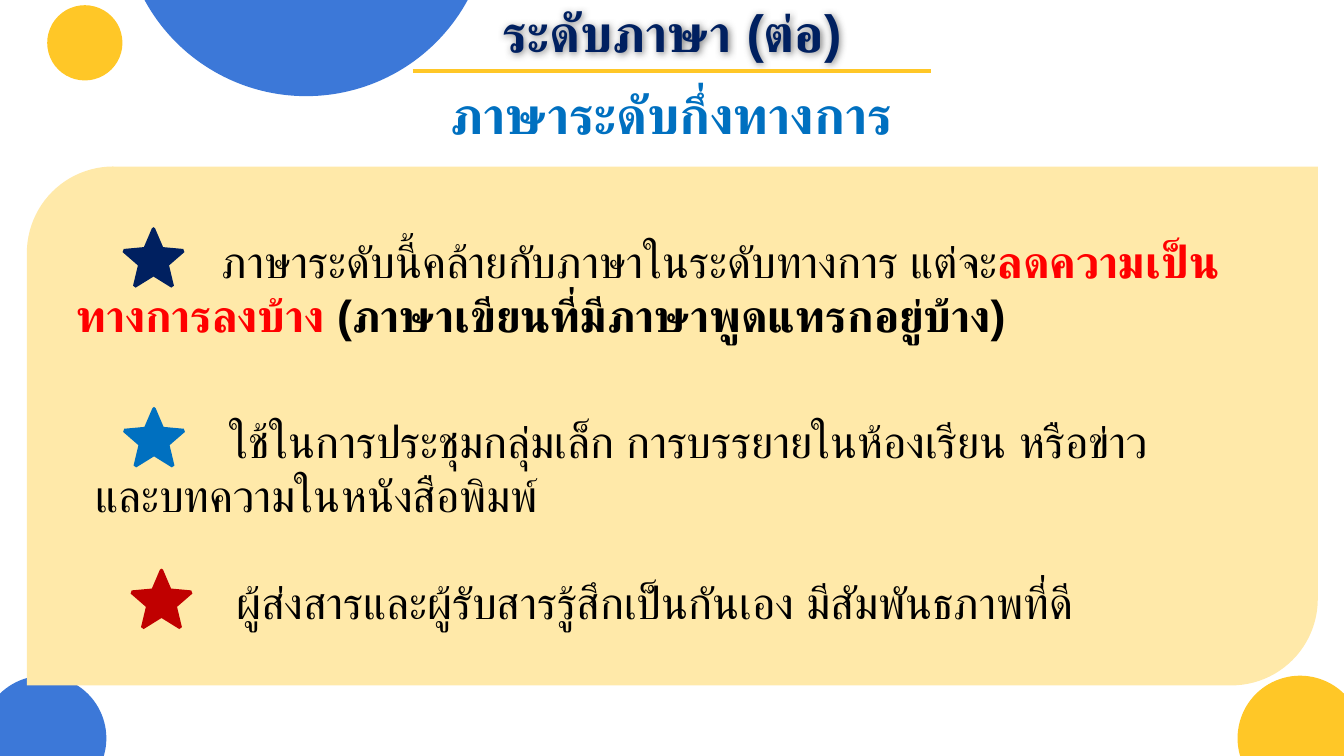
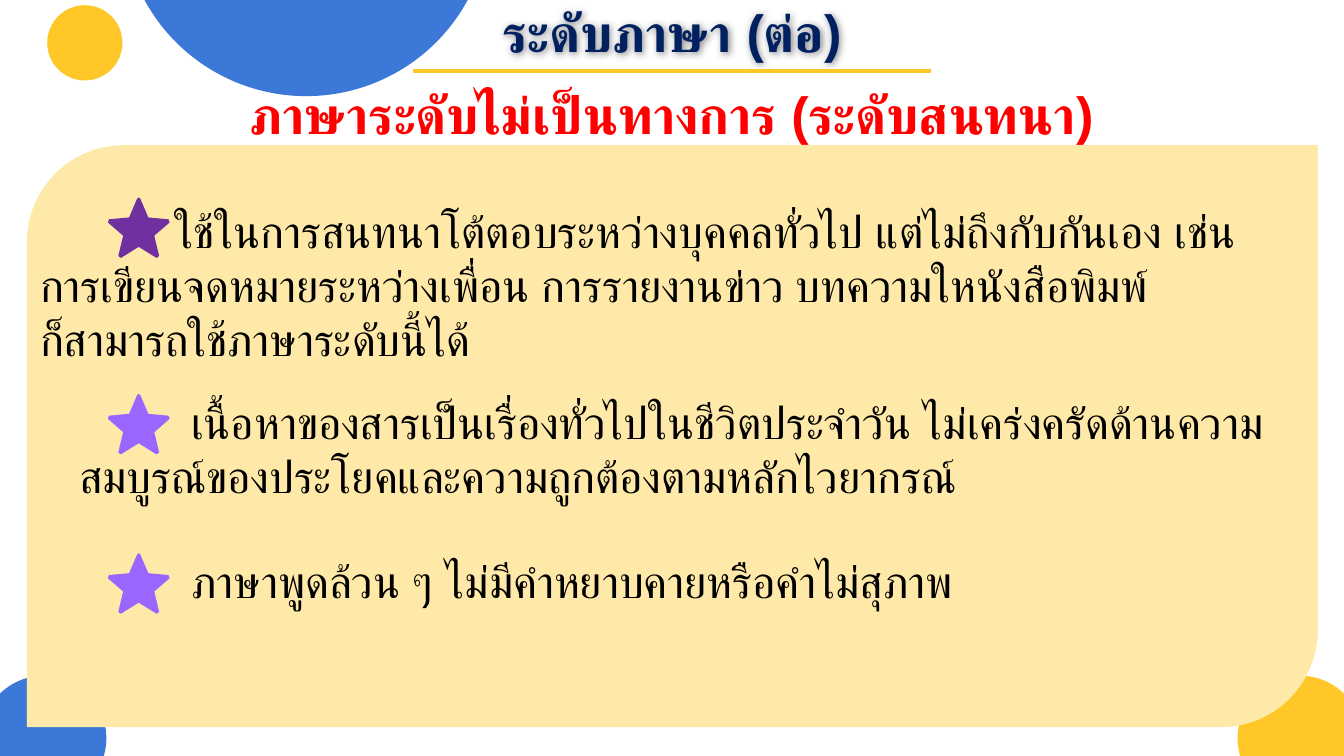
from lxml import etree
from pptx import Presentation
from pptx.dml.color import RGBColor
from pptx.enum.shapes import MSO_CONNECTOR, MSO_SHAPE
from pptx.enum.text import MSO_ANCHOR, MSO_AUTO_SIZE, PP_ALIGN
from pptx.oxml.ns import qn
from pptx.util import Pt

ELLIPSE = MSO_SHAPE.OVAL
PANEL = MSO_SHAPE.ROUND_2_DIAG_RECTANGLE
STRAIGHT = MSO_CONNECTOR.STRAIGHT
TOP = MSO_ANCHOR.TOP
NO_FIT = MSO_AUTO_SIZE.NONE
LEFT, CENTER = PP_ALIGN.LEFT, PP_ALIGN.CENTER

BLUE = RGBColor(0x3C, 0x78, 0xD8)
YELLOW = RGBColor(0xFF, 0xC7, 0x27)
CREAM = RGBColor(0xFF, 0xE9, 0xA9)
NAVY = RGBColor(0x00, 0x20, 0x60)
SKY = RGBColor(0x00, 0x70, 0xC0)
RED = RGBColor(0xFF, 0x00, 0x00)
DARK_RED = RGBColor(0xC0, 0x00, 0x00)
PURPLE = RGBColor(0x70, 0x30, 0xA0)
VIOLET = RGBColor(0x99, 0x66, 0xFF)
BLACK = RGBColor(0x00, 0x00, 0x00)
PALE = RGBColor(0xEB, 0xEB, 0xEB)
GRAY = RGBColor(0x66, 0x66, 0x66)

HEADING = {"name": "Arial", "size": Pt(28), "bold": True}
BODY = {"name": "Arial", "size": Pt(24), "bold": False}
STRONG = {**BODY, "bold": True}
HEADING_MARGIN = (7.2, 7.2)
BODY_MARGIN = (7.2, 3.6)

CIRCLES = [
    (-10, 362, 67, BLUE),
    (65.5, -145.5, 197, BLUE),
    (25.3, 2.8, 40.3, YELLOW),
    (663, 362, 67, YELLOW),
]
STAR_CENTER = 16.75
STAR_HALF = [(16.75, 0), (15.9, 0.6), (11.6, 10.7), (0.8, 11.7), (0.2, 13.4),
             (8.4, 20.5), (5.8, 31.4), (7.2, 32.4), (16.75, 26.5)]


def add_color(parent, color, alpha=None):
    node = etree.SubElement(parent, qn("a:srgbClr"), val=str(color))
    if alpha:
        etree.SubElement(node, qn("a:alpha"), val=str(alpha))


def paint(shape, color):
    shape.shadow.inherit = False
    shape.fill.solid()
    shape.fill.fore_color.rgb = color
    shape.line.fill.background()
    return shape


def add_preset(page, preset, left, top, width, height, color):
    return paint(page.shapes.add_shape(preset, Pt(left), Pt(top), Pt(width), Pt(height)), color)


def add_star(page, left, top, color):
    mirrored = [(2 * STAR_CENTER - x, y) for x, y in reversed(STAR_HALF[1:-1])]
    points = [(Pt(left + x), Pt(top + y)) for x, y in STAR_HALF + mirrored]
    builder = page.shapes.build_freeform(*points[0])
    builder.add_line_segments(points[1:], close=True)
    paint(builder.convert_to_shape(), color)


def outline_span(span, color, width):
    properties = span.font._element
    line = etree.Element(qn("a:ln"), w=str(Pt(width)))
    add_color(etree.SubElement(line, qn("a:solidFill")), color)
    properties.insert(0, line)


def add_span(para, text, style, color, outline=None):
    span = para.add_run()
    span.text = text
    for name, value in style.items():
        setattr(span.font, name, value)
    span.font.color.rgb = color
    etree.SubElement(span.font._element, qn("a:cs"), typeface=style["name"])
    if outline:
        outline_span(span, *outline)


def write(box, spans, margins, align=LEFT, indent=0):
    frame = box.text_frame
    side, edge = margins
    settings = {"word_wrap": True, "auto_size": NO_FIT, "vertical_anchor": TOP,
                "margin_left": Pt(side), "margin_right": Pt(side),
                "margin_top": Pt(edge), "margin_bottom": Pt(edge)}
    for name, value in settings.items():
        setattr(frame, name, value)
    para = frame.paragraphs[0]
    para.alignment = align
    if indent:
        properties = para._p.get_or_add_pPr()
        properties.set("marL", "0")
        properties.set("indent", str(Pt(indent)))
    for text, *look in spans:
        first, *others = text.split("\n")
        add_span(para, first, *look)
        for line in others:
            para.add_line_break()
            add_span(para, line, *look)


def add_box(page, left, top, width, height):
    return page.shapes.add_textbox(Pt(left), Pt(top), Pt(width), Pt(height))


def plain(text):
    return [(text, BODY, BLACK, (BLACK, 0.75))]


def heading(text, color):
    return [(text, HEADING, color, (PALE, 1))]


def add_header(page):
    box = add_box(page, 242.3, -7.2, 235.4, 45.4)
    write(box, heading("ระดับภาษา (ต่อ)", NAVY), HEADING_MARGIN, CENTER)
    effects = etree.SubElement(box._element.spPr, qn("a:effectLst"))
    shadow = etree.SubElement(effects, qn("a:outerShdw"), blurRad=str(Pt(4)),
                              dist=str(Pt(0.5)), dir="2700000", algn="ctr", rotWithShape="0")
    add_color(shadow, GRAY, 80000)
    rule = page.shapes.add_connector(STRAIGHT, Pt(221), Pt(38.2), Pt(499), Pt(38.2))
    rule.line.color.rgb = YELLOW
    rule.line.width = Pt(2.25)
    etree.SubElement(rule._element.spPr, qn("a:effectLst"))


def decorate_layout(layout, page):
    for left, top, size, color in CIRCLES:
        circle = add_preset(page, ELLIPSE, left, top, size, size, color)
        layout.shapes.element.append(circle.element)


def add_page(deck, layout, title, color, panel_top, panel_height, points):
    page = deck.slides.add_slide(layout)
    panel = add_preset(page, PANEL, 14.4, panel_top, 691.6, panel_height, CREAM)
    box = page.shapes.title
    box.left, box.top, box.width, box.height = Pt(63.4), Pt(36.7), Pt(592.6), Pt(45.4)
    write(box, heading(title, color), HEADING_MARGIN, CENTER)
    panel.element.addnext(box.element)
    add_header(page)
    for spans, frame, indent, star in points:
        write(add_box(page, *frame), spans, BODY_MARGIN, indent=indent)
        add_star(page, *star)
    return page


def main():
    deck = Presentation()
    deck.slide_width, deck.slide_height = Pt(720), Pt(405)
    layout = deck.slide_layouts[5]

    semiformal = [
        (plain("ภาษาระดับนี้คล้ายกับภาษาในระดับทางการ แต่จะ")
         + [("ลดความเป็นทางการลงบ้าง ", STRONG, RED, (PALE, 1)),
            ("(ภาษาเขียนที่มีภาษาพูดแทรกอยู่บ้าง)", STRONG, BLACK)],
         (33.8, 121.7, 640.8, 65.5), 78, (65.5, 121.7, NAVY)),
        (plain("ใช้ในการประชุมกลุ่มเล็ก การบรรยายในห้องเรียน หรือข่าวและบทความในหนังสือพิมพ์"),
         (43.9, 218.2, 612, 65.5), 72, (65.8, 218, SKY)),
        (plain("ผู้ส่งสารและผู้รับสารรู้สึกเป็นกันเอง มีสัมพันธภาพที่ดี"),
         (47.5, 304.6, 612, 36), 72, (69.8, 304.6, DARK_RED)),
    ]
    informal = [
        (plain("ใช้ในการสนทนาโต้ตอบระหว่างบุคคลทั่วไป แต่ไม่ถึงกับกันเอง เช่น "
               "การเขียนจดหมายระหว่างเพื่อน การรายงานข่าว บทความใหนังสือพิมพ์\n"
               "ก็สามารถใช้ภาษาระดับนี้ได้"),
         (14.4, 105.8, 691.6, 123.8), 72, (57.6, 105.8, PURPLE)),
        (plain("เนื้อหาของสารเป็นเรื่องทั่วไปในชีวิตประจำวัน "
               "ไม่เคร่งครัดด้านความสมบูรณ์ของประโยคและความถูกต้องตามหลักไวยากรณ์"),
         (35.3, 208.1, 670.3, 65.5), 60, (57.6, 211, VIOLET)),
        (plain("ภาษาพูดล้วน ๆ ไม่มีคำหยาบคายหรือคำไม่สุภาพ"),
         (35.3, 293, 670.3, 36), 60, (57.6, 296.4, VIOLET)),
    ]
    first = add_page(deck, layout, "ภาษาระดับกึ่งทางการ", SKY, 89.2, 278, semiformal)
    add_page(deck, layout, "ภาษาระดับไม่เป็นทางการ (ระดับสนทนา)", RED, 77.8, 311.8, informal)
    decorate_layout(layout, first)
    deck.save("out.pptx")


if __name__ == "__main__":
    main()
